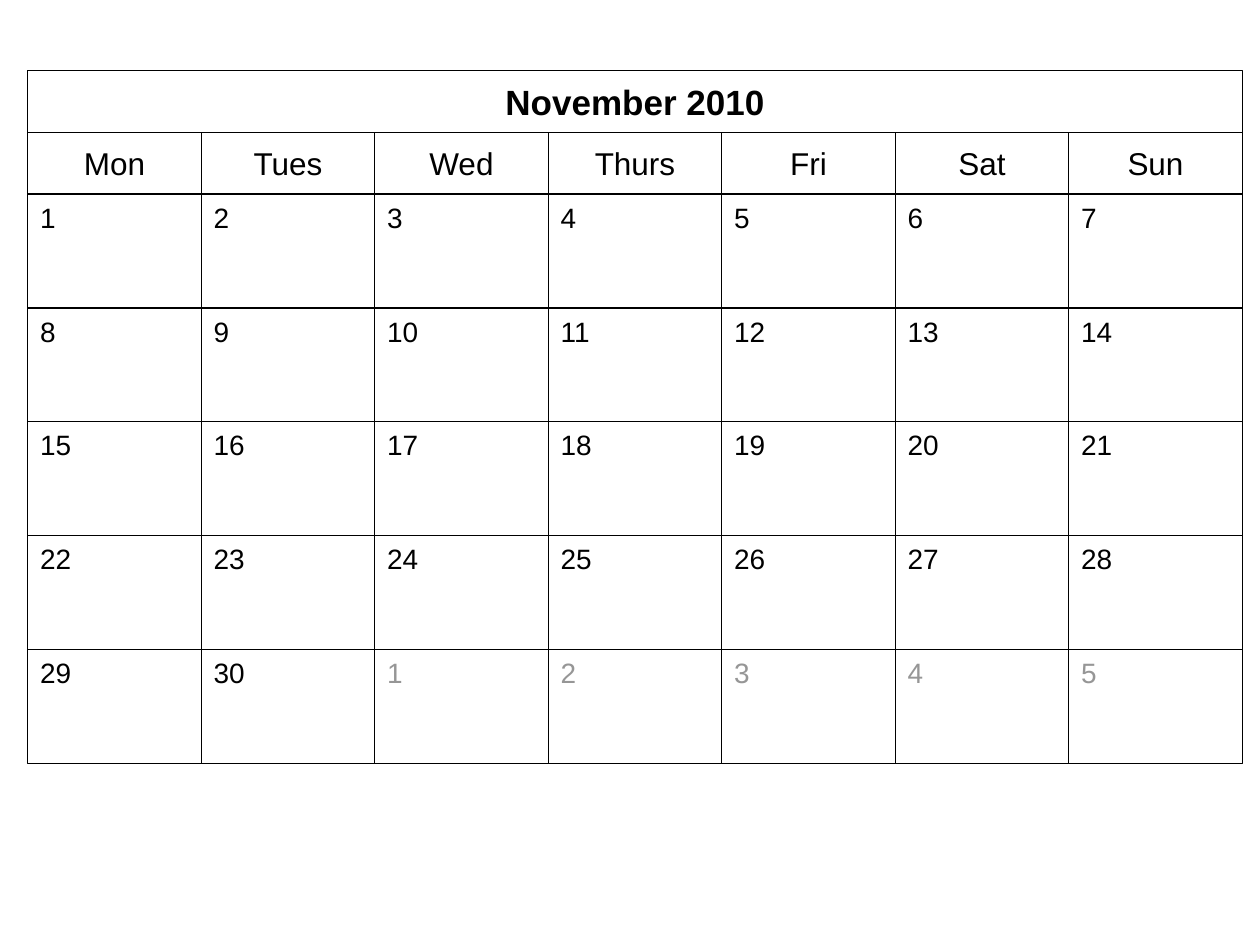
from pptx import Presentation, util as u
from pptx.dml.color import RGBColor
from pptx.enum import shapes, text

# Content
TITLE = "November 2010"
DAYS = ["Mon", "Tues", "Wed", "Thurs", "Fri", "Sat", "Sun"]
LAST = 30   # days in the month
WEEKS = 5

THEME = {
    "font": "Arial",
    "ink": RGBColor(0, 0, 0),
    "faint": RGBColor(0x96, 0x96, 0x96),
    "paper": RGBColor(255, 255, 255),
    "title": u.Pt(20),
    "head": u.Pt(18),
    "date": u.Pt(16),
    "line": u.Pt(0.75),
}

# Grid, in inches
LEFT, TOP, WIDTH = 0.22, 0.56, 9.64
HEAD = 0.49             # height of the title and weekday rows
BODY = TOP + 2 * HEAD   # top of the first week
COL = WIDTH / len(DAYS)
ROW = (6.06 - BODY) / WEEKS

deck = Presentation()
deck.slide_width, deck.slide_height = u.Inches(10), u.Inches(7.5)
slide = deck.slides.add_slide(deck.slide_layouts[6])


def add_box(label, x, y, w, h, size, color):
    """Add an outlined cell with its label at the top left."""
    box = slide.shapes.add_shape(
        shapes.MSO_SHAPE.RECTANGLE, *(u.Inches(n) for n in (x, y, w, h)))
    box.shadow.inherit = False
    box.fill.background()
    box.line.color.rgb = THEME["ink"]
    box.line.width = THEME["line"]
    frame = box.text_frame
    frame.word_wrap = True
    frame.vertical_anchor = text.MSO_ANCHOR.TOP
    para = frame.paragraphs[0]
    para.text = label
    para.alignment = text.PP_ALIGN.LEFT
    para.font.name = THEME["font"]
    para.font.size = size
    para.font.color.rgb = color
    return box


def add_head(label, x, y, w, size, bold=False):
    """Add a filled cell with its label in the centre."""
    box = add_box(label, x, y, w, HEAD, size, THEME["ink"])
    box.fill.solid()
    box.fill.fore_color.rgb = THEME["paper"]
    frame = box.text_frame
    frame.margin_top = frame.margin_bottom = u.Inches(0.02)
    frame.vertical_anchor = text.MSO_ANCHOR.MIDDLE
    frame.paragraphs[0].alignment = text.PP_ALIGN.CENTER
    frame.paragraphs[0].font.bold = bold


# Title and weekdays
add_head(TITLE, LEFT, TOP, WIDTH, THEME["title"], bold=True)
for col, day in enumerate(DAYS):
    add_head(day, LEFT + col * COL, TOP + HEAD, COL, THEME["head"])

# Dates, running on into the next month
for i in range(WEEKS * len(DAYS)):
    row, col = divmod(i, len(DAYS))
    color = THEME["ink"] if i < LAST else THEME["faint"]
    add_box(str(i % LAST + 1), LEFT + col * COL, BODY + row * ROW,
            COL, ROW, THEME["date"], color)

deck.save("out.pptx")
